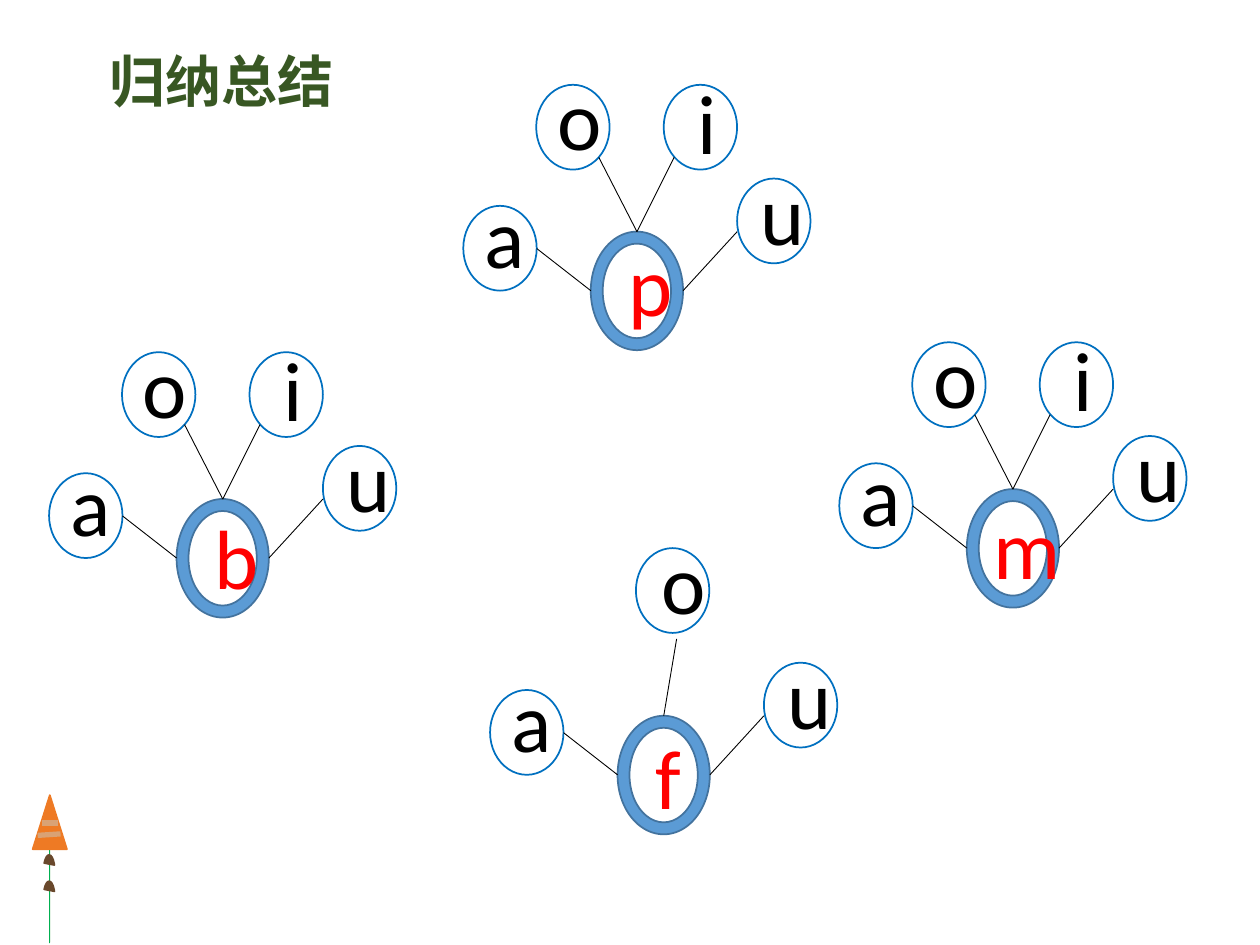
from dataclasses import dataclass, replace

from lxml import etree
from pptx import Presentation
from pptx.dml import color
from pptx.enum import shapes, text
from pptx.oxml import ns
from pptx.shapes import autoshape, base, shapetree
from pptx.text import text as text_api
from pptx.util import Cm, Pt

Point = tuple[float, float]


@dataclass(frozen=True)
class Theme:
    latin: str = "Calibri"
    chinese: str = "Noto Sans CJK SC"
    title_size: float = 32
    letter_size: float = 48
    title: str = "385723"
    final: str = "000000"
    initial: str = "FF0000"
    petal: str = "FFFFFF"
    petal_line: str = "0070C0"
    ring: str = "5B9BD5"
    ring_line: str = "43739E"
    pencil: str = "2CA03B"
    pencil_line: str = "00B050"
    tip: str = "EE7A24"
    stripe: str = "D9A275"
    band: str = "FFD966"
    spot: str = "69482C"


@dataclass(frozen=True)
class Petal:
    letter: str
    corner: Point
    letter_corner: Point
    stem_start: Point
    stem_end: Point


@dataclass(frozen=True)
class Flower:
    initial: str
    corner: Point
    initial_offset: Point
    petals: tuple[Petal, ...]


THEME = Theme()
RING_SIZE = (1.86, 2.39)
PETAL_SIZE = (1.48, 1.71)
LETTER_SIZE = (1.14, 2.31)
RING_TOP = (0.93, 0)

A = Petal("a", (-2.57, -0.52), (-2.39, -1.07), (-1.09, 0.34), (0, 1.19))
O = Petal("o", (-1.1, -2.96), (-0.93, -3.45), (0.16, -1.5), RING_TOP)
I = Petal("i", (1.47, -2.96), (1.91, -3.38), (1.68, -1.5), RING_TOP)
U = Petal("u", (2.95, -1.07), (3.18, -1.54), (1.86, 1.19), (2.95, 0))
MIDDLE_O = replace(
    O, corner=(0.37, -3.38), letter_corner=(0.64, -3.86), stem_start=(1.19, -1.55)
)

FLOWERS = (
    Flower("b", (3.56, 10.06), (0.51, 0), (A, O, I, U)),
    Flower("p", (11.91, 4.67), (0.51, -0.1), (A, O, I, U)),
    Flower("m", (19.49, 9.86), (0.28, 0), (A, O, I, U)),
    Flower("f", (12.45, 14.43), (0.51, 0.08), (A, MIDDLE_O, U)),
)


def shifted(origin: Point, offset: Point) -> Point:
    return origin[0] + offset[0], origin[1] + offset[1]


def rgb(value: str) -> color.RGBColor:
    return color.RGBColor.from_string(value)


def paint(shape: autoshape.Shape, fill: str, line: str) -> None:
    shape.shadow.inherit = False
    shape.fill.solid()
    shape.fill.fore_color.rgb = rgb(fill)
    shape.line.color.rgb = rgb(line)
    shape.line.width = Pt(1)


def add_preset(
    tree: shapetree.GroupShapes,
    kind: shapes.MSO_SHAPE,
    corner: Point,
    size: Point,
    fill: str,
    line: str,
) -> autoshape.Shape:
    shape = tree.add_shape(kind, *map(Cm, corner + size))
    paint(shape, fill, line)
    return shape


def add_outline(
    tree: shapetree.GroupShapes, points: list[Point], fill: str, line: str
) -> None:
    start, *others = points
    builder = tree.build_freeform(*start, scale=float(Cm(1)))
    builder.add_line_segments(others, close=True)
    paint(builder.convert_to_shape(), fill, line)


def add_line(
    tree: shapetree.GroupShapes, start: Point, end: Point, line: str, width: float
) -> None:
    connector = tree.add_connector(
        shapes.MSO_CONNECTOR.STRAIGHT, *map(Cm, start + end)
    )
    connector.line.color.rgb = rgb(line)
    connector.line.width = Pt(width)
    properties = connector._element.spPr
    etree.SubElement(properties, ns.qn("a:effectLst"))


def add_run(
    paragraph: text_api._Paragraph, words: str, font: str, size: float, fill: str
) -> text_api._Run:
    run = paragraph.add_run()
    run.text = words
    run.font.name = font
    run.font.size = Pt(size)
    run.font.color.rgb = rgb(fill)
    return run


def add_letter(
    tree: shapetree.GroupShapes, letter: str, corner: Point, fill: str
) -> None:
    box = tree.add_textbox(*map(Cm, corner + LETTER_SIZE))
    frame = box.text_frame
    frame.word_wrap = True
    frame.auto_size = text.MSO_AUTO_SIZE.SHAPE_TO_FIT_TEXT
    add_run(frame.paragraphs[0], letter, THEME.latin, THEME.letter_size, fill)


def add_flower(tree: shapetree.GroupShapes, flower: Flower) -> None:
    origin = flower.corner
    ring = add_preset(
        tree, shapes.MSO_SHAPE.DONUT, origin, RING_SIZE, THEME.ring, THEME.ring_line
    )
    ring.adjustments[0] = 0.13
    for petal in flower.petals:
        add_preset(
            tree,
            shapes.MSO_SHAPE.FLOWCHART_CONNECTOR,
            shifted(origin, petal.corner),
            PETAL_SIZE,
            THEME.petal,
            THEME.petal_line,
        )
        start = shifted(origin, petal.stem_start)
        end = shifted(origin, petal.stem_end)
        add_line(tree, start, end, THEME.final, 0.5)
        letter_corner = shifted(origin, petal.letter_corner)
        add_letter(tree, petal.letter, letter_corner, THEME.final)
    initial_corner = shifted(origin, flower.initial_offset)
    add_letter(tree, flower.initial, initial_corner, THEME.initial)


def add_pencil(tree: shapetree.GroupShapes) -> None:
    body = [(0.84, 16.79), (1.24, 17.04), (1.09, 18.72), (0.76, 18.72)]
    add_outline(tree, body, THEME.pencil, THEME.pencil_line)
    add_preset(
        tree,
        shapes.MSO_SHAPE.ISOSCELES_TRIANGLE,
        (0.66, 16.03),
        (0.69, 1.09),
        THEME.tip,
        THEME.tip,
    )
    band = [(0.84, 17.55), (1.17, 17.55), (1.17, 17.68), (0.81, 17.63)]
    add_outline(tree, band, THEME.band, THEME.band)
    for top in (17.45, 17.98):
        spot = add_preset(
            tree, shapes.MSO_SHAPE.CHORD, (0.66, top), (0.66, 0.23), THEME.spot, THEME.spot
        )
        spot.adjustments[0] = 89.45
        spot.adjustments[1] = 132.13
        spot.rotation = 90
    add_line(tree, (0.84, 16.59), (1.17, 16.59), THEME.stripe, 3)
    add_line(tree, (0.76, 16.84), (1.22, 16.81), THEME.stripe, 3)


def set_title(title: base.BaseShape, words: str) -> None:
    title.left, title.top, title.width, title.height = map(Cm, (1.93, 0.81, 5.08, 1.63))
    frame = title.text_frame
    frame.word_wrap = False
    frame.auto_size = text.MSO_AUTO_SIZE.SHAPE_TO_FIT_TEXT
    frame.vertical_anchor = text.MSO_ANCHOR.TOP
    paragraph = frame.paragraphs[0]
    paragraph.alignment = text.PP_ALIGN.CENTER
    run = add_run(paragraph, words, THEME.chinese, THEME.title_size, THEME.title)
    run.font.bold = True
    east_asian = etree.SubElement(run.font._element, ns.qn("a:ea"))
    east_asian.set("typeface", THEME.chinese)


def main() -> None:
    presentation = Presentation()
    presentation.slide_width = Cm(25.4)
    presentation.slide_height = Cm(19.05)
    slide = presentation.slides.add_slide(presentation.slide_layouts[5])
    set_title(slide.shapes.title, "归纳总结")
    add_pencil(slide.shapes.add_group_shape().shapes)
    for flower in FLOWERS:
        add_flower(slide.shapes.add_group_shape().shapes, flower)
    presentation.save("out.pptx")


if __name__ == "__main__":
    main()
